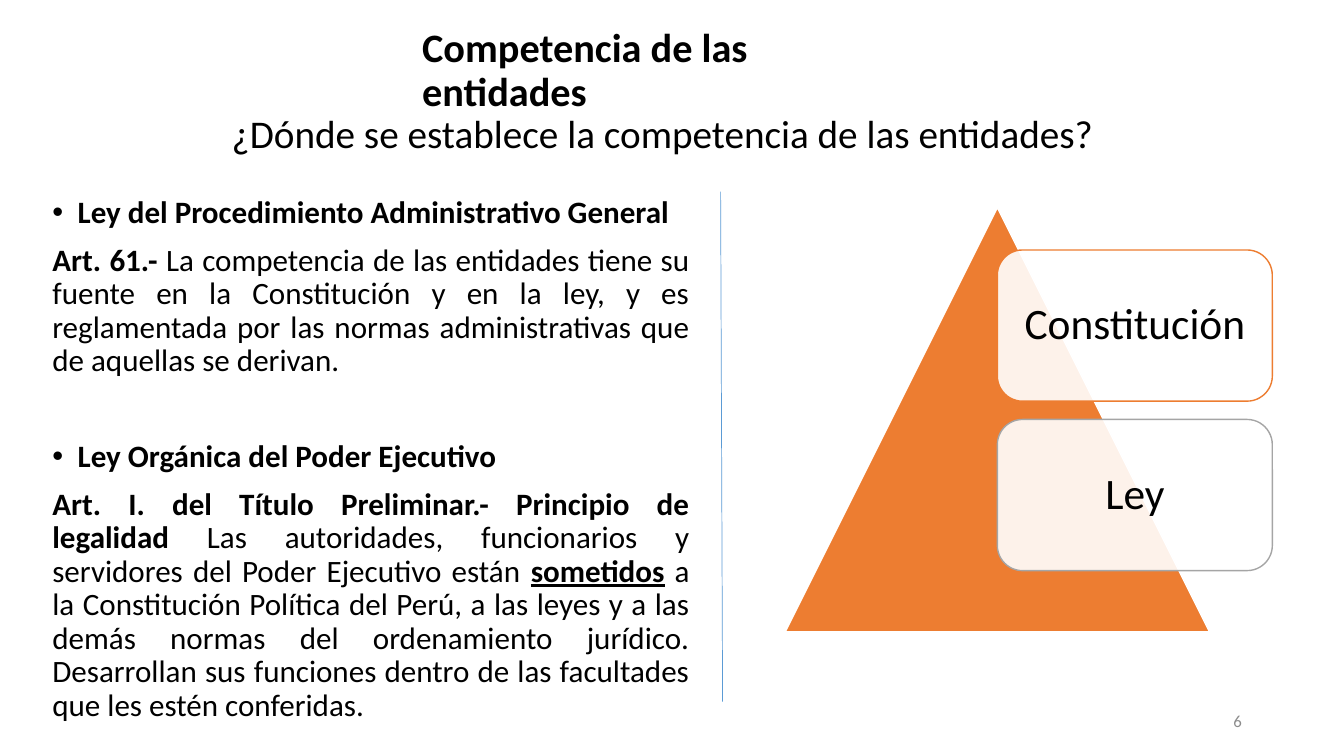
"""Build the slide on where the competence of public entities is established."""
from lxml.etree import SubElement
from pptx import Presentation
from pptx.dml.color import RGBColor
from pptx.enum.shapes import MSO_CONNECTOR, MSO_SHAPE
from pptx.enum.text import MSO_ANCHOR, MSO_AUTO_SIZE, PP_ALIGN
from pptx.oxml.ns import qn
from pptx.util import Cm, Pt

FONT = "Calibri"
BLACK = RGBColor(0x00, 0x00, 0x00)
WHITE = RGBColor(0xFF, 0xFF, 0xFF)
ORANGE = RGBColor(0xED, 0x7D, 0x31)
GRAY = RGBColor(0xA5, 0xA5, 0xA5)
NUMBER_GRAY = RGBColor(0x8C, 0x8C, 0x8C)
BLUE = RGBColor(0x5B, 0x9B, 0xD5)

TITLE = "Competencia de las entidades"
QUESTION = "¿Dónde se establece la competencia de las entidades?"
PAGE_NUMBER = "6"
LAWS = [
    {
        "name": "Ley del Procedimiento Administrativo General",
        "space_before": 10,
        "article": [
            ("Art. 61.- ", "bold"),
            ("La competencia de las entidades tiene su fuente en la Constitución y en la ley, "
             "y es reglamentada por las normas administrativas que de aquellas se derivan.", ""),
        ],
    },
    {
        "name": "Ley Orgánica del Poder Ejecutivo",
        "space_before": 44.4,
        "article": [
            ("Art. I. del Título Preliminar.- Principio de legalidad ", "bold"),
            ("Las autoridades, funcionarios y servidores del Poder Ejecutivo están ", ""),
            ("sometidos", "bold underline"),
            (" a la Constitución Política del Perú, a las leyes y a las demás normas del "
             "ordenamiento jurídico. Desarrollan sus funciones dentro de las facultades "
             "que les estén conferidas.", ""),
        ],
    },
]
SOURCES = [("Constitución", ORANGE), ("Ley", GRAY)]

PYRAMID_LEFT, PYRAMID_TOP, PYRAMID_SIZE = 19.79, 5.23, 10.69
SOURCE_WIDTH, SOURCE_HEIGHT, SOURCE_TOP, SOURCE_STEP = 6.93, 3.81, 6.3, 4.27


def add_span(para, text, size, style="", color=BLACK):
    span = para.add_run()
    span.text = text
    span.font.name = FONT
    span.font.size = Pt(size)
    span.font.bold = "bold" in style
    span.font.underline = "underline" in style
    span.font.color.rgb = color


def add_box(page, left, top, width, height, anchor=MSO_ANCHOR.TOP):
    box = page.shapes.add_textbox(Cm(left), Cm(top), Cm(width), Cm(height))
    frame = box.text_frame
    frame.word_wrap = True
    frame.auto_size = MSO_AUTO_SIZE.NONE
    frame.vertical_anchor = anchor
    return frame


def add_figure(page, kind, left, top, width, height, fill, line):
    figure = page.shapes.add_shape(kind, Cm(left), Cm(top), Cm(width), Cm(height))
    figure.shadow.inherit = False
    figure.fill.solid()
    figure.fill.fore_color.rgb = fill
    figure.line.color.rgb = line
    figure.line.width = Pt(1)
    return figure


def add_bullet(para):
    properties = para._p.get_or_add_pPr()
    properties.set("marL", str(Cm(0.64)))
    properties.set("indent", str(-Cm(0.64)))
    SubElement(properties, qn("a:buFont"), typeface="Arial")
    SubElement(properties, qn("a:buChar"), char="•")


def add_laws(page):
    frame = add_box(page, 1.07, 4.83, 16.56, 13.82)
    for index, law in enumerate(LAWS):
        heading = frame.add_paragraph() if index else frame.paragraphs[0]
        article = frame.add_paragraph()
        for para, space in ((heading, law["space_before"]), (article, 10)):
            para.alignment = PP_ALIGN.JUSTIFY
            para.line_spacing = 0.9
            para.space_before = Pt(space)
        add_bullet(heading)
        add_span(heading, law["name"], 22.2, "bold")
        for text, style in law["article"]:
            add_span(article, text, 22.2, style)


def add_divider(page):
    divider = page.shapes.add_connector(
        MSO_CONNECTOR.STRAIGHT, Cm(18.16), Cm(4.83), Cm(18.21), Cm(17.68))
    divider.line.color.rgb = BLUE
    divider.line.width = Pt(0.5)
    SubElement(divider.element.spPr, qn("a:effectLst"))


def add_pyramid(page):
    add_figure(page, MSO_SHAPE.ISOSCELES_TRIANGLE, PYRAMID_LEFT, PYRAMID_TOP,
               PYRAMID_SIZE, PYRAMID_SIZE, ORANGE, WHITE)
    for index, (name, line) in enumerate(SOURCES):
        card = add_figure(page, MSO_SHAPE.ROUNDED_RECTANGLE,
                          PYRAMID_LEFT + PYRAMID_SIZE / 2, SOURCE_TOP + index * SOURCE_STEP,
                          SOURCE_WIDTH, SOURCE_HEIGHT, WHITE, line)
        color = card.element.spPr.find(qn("a:solidFill"))[0]
        SubElement(color, qn("a:alpha"), val="90000")
        frame = card.text_frame
        frame.word_wrap = True
        frame.vertical_anchor = MSO_ANCHOR.MIDDLE
        frame.margin_left = frame.margin_right = Cm(0.33)
        frame.margin_top = frame.margin_bottom = Cm(0.33)
        para = frame.paragraphs[0]
        para.alignment = PP_ALIGN.CENTER
        para.line_spacing = 0.9
        add_span(para, name, 31)


def main():
    deck = Presentation()
    deck.slide_width, deck.slide_height = Cm(33.87), Cm(19.05)
    page = deck.slides.add_slide(deck.slide_layouts[6])

    title = add_box(page, 10.39, 0.99, 13, 1.63, MSO_ANCHOR.MIDDLE).paragraphs[0]
    title.line_spacing = 0.9
    add_span(title, TITLE, 28.8, "bold")
    add_laws(page)
    question = add_box(page, 5.59, 2.62, 22.61, 2.24).paragraphs[0]
    add_span(question, QUESTION, 28)
    add_divider(page)
    add_pyramid(page)
    number = add_box(page, 23.93, 17.65, 7.62, 1.02, MSO_ANCHOR.MIDDLE).paragraphs[0]
    number.alignment = PP_ALIGN.RIGHT
    add_span(number, PAGE_NUMBER, 12, color=NUMBER_GRAY)

    deck.save("out.pptx")


if __name__ == "__main__":
    main()
